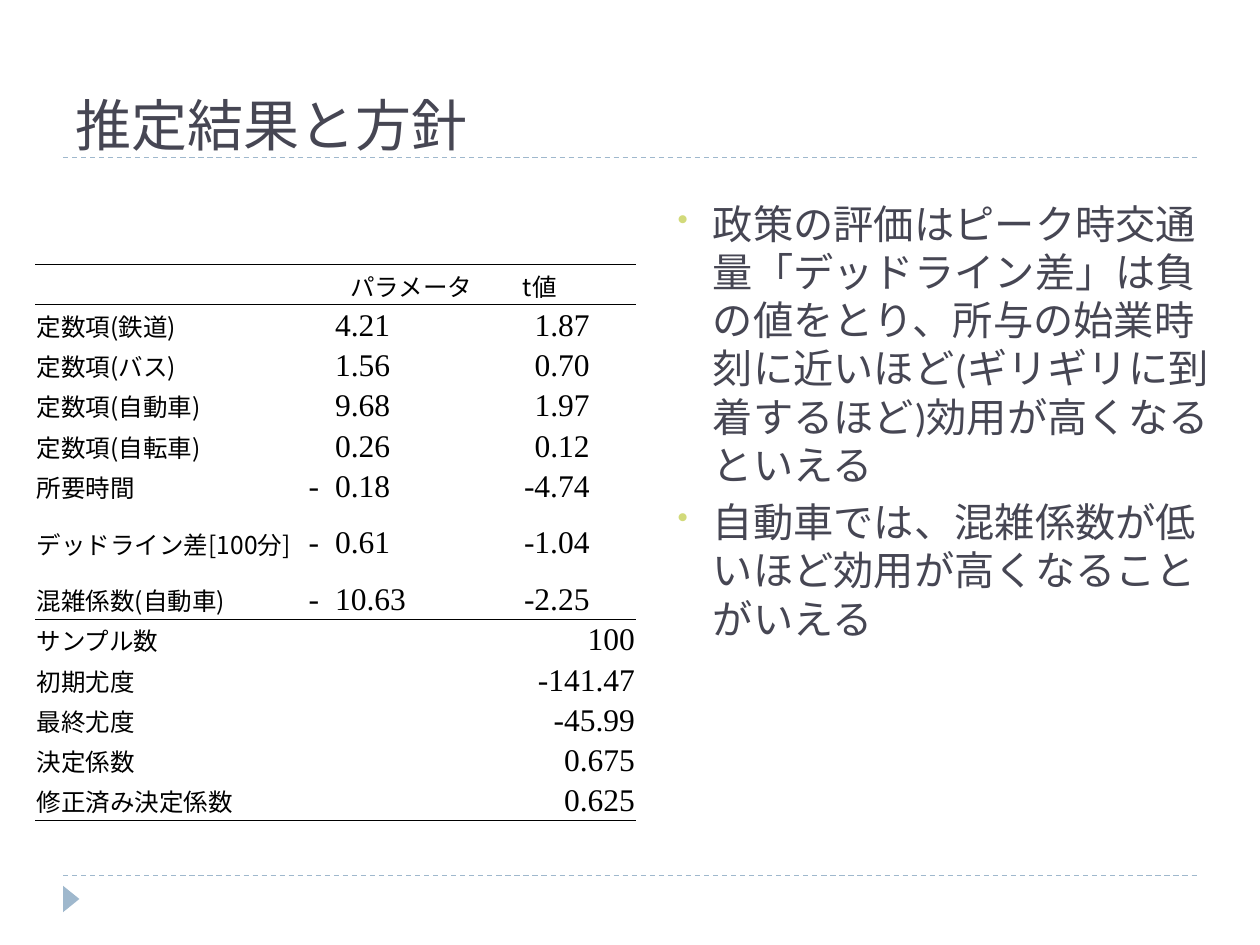
from lxml import etree
from pptx import Presentation
from pptx.dml.color import RGBColor
from pptx.enum.dml import MSO_LINE
from pptx.enum.shapes import MSO_CONNECTOR, MSO_SHAPE
from pptx.enum.text import MSO_ANCHOR, PP_ALIGN
from pptx.oxml.ns import qn
from pptx.util import Inches, Pt

STRAIGHT = MSO_CONNECTOR.STRAIGHT
TRIANGLE = MSO_SHAPE.ISOSCELES_TRIANGLE
DASH = MSO_LINE.DASH
TOP, MIDDLE, BOTTOM = MSO_ANCHOR.TOP, MSO_ANCHOR.MIDDLE, MSO_ANCHOR.BOTTOM
LEFT, CENTER, RIGHT = PP_ALIGN.LEFT, PP_ALIGN.CENTER, PP_ALIGN.RIGHT

INK = RGBColor(0x46, 0x46, 0x53)
BLACK = RGBColor(0x00, 0x00, 0x00)
ACCENT = RGBColor(0x9F, 0xB8, 0xCD)
BULLET = RGBColor(0xD2, 0xDA, 0x7A)

COLUMNS, ROWS = 100, 75
UNIT = Inches(0.1)

LABEL = {"font": "Noto Sans CJK JP", "size": 14, "color": BLACK}
NUMBER = {"font": "Times New Roman", "size": 18, "color": BLACK}

TABLE_COLUMNS = (21.6, 2.1, 12.3, 8.1, 3.6)
TABLE_ROW = 3.2
ESTIMATES = (
    ("定数項(鉄道)", "", "4.21", "1.87"),
    ("定数項(バス)", "", "1.56", "0.70"),
    ("定数項(自動車)", "", "9.68", "1.97"),
    ("定数項(自転車)", "", "0.26", "0.12"),
    ("所要時間", "-", "0.18", "-4.74"),
    ("デッドライン差[100分]", "-", "0.61", "-1.04"),
    ("混雑係数(自動車)", "-", "10.63", "-2.25"),
)
SUMMARY = (
    ("サンプル数", "100"),
    ("初期尤度", "-141.47"),
    ("最終尤度", "-45.99"),
    ("決定係数", "0.675"),
    ("修正済み決定係数", "0.625"),
)
FINDINGS = (
    "政策の評価はピーク時交通量「デッドライン差」は負の値をとり、所与の始業時刻に近いほど"
    "(ギリギリに到着するほど)効用が高くなるといえる",
    "自動車では、混雑係数が低いほど効用が高くなることがいえる",
)


def grid(*lengths):
    """Turn grid units into slide lengths."""
    return [int(length * UNIT) for length in lengths]


def write(para, text, font, size, color, align=LEFT):
    """Put one formatted span of text in a paragraph."""
    para.alignment = align
    span = para.add_run()
    span.text = text
    span.font.name = font
    span.font.size = Pt(size)
    span.font.color.rgb = color
    properties = span.font._element
    properties.set("lang", "ja-JP")
    etree.SubElement(properties, qn("a:ea"), typeface=font)


def add_bullet(para):
    """Give a paragraph its hanging coloured bullet."""
    para.space_before = Pt(5)
    properties = para._p.get_or_add_pPr()
    properties.set("marL", str(Inches(0.4)))
    properties.set("indent", str(Inches(-0.28)))
    color = etree.SubElement(properties, qn("a:buClr"))
    etree.SubElement(color, qn("a:srgbClr"), val=str(BULLET))
    etree.SubElement(properties, qn("a:buSzPct"), val="76000")
    etree.SubElement(properties, qn("a:buChar"), char="•")


def add_text(page, place, texts, anchor=TOP, bullets=False, **style):
    """Add a wrapped text box with one paragraph per text."""
    frame = page.shapes.add_textbox(*grid(*place)).text_frame
    frame.word_wrap = True
    frame.vertical_anchor = anchor
    for index, text in enumerate(texts):
        para = frame.add_paragraph() if index else frame.paragraphs[0]
        if bullets:
            add_bullet(para)
        write(para, text, **style)


def add_divider(page, row):
    """Draw a dashed line across the slide between its margins."""
    divider = page.shapes.add_connector(STRAIGHT, *grid(5, row, COLUMNS - 5, row))
    divider.line.color.rgb = ACCENT
    divider.line.width = Pt(0.75)
    divider.line.dash_style = DASH
    etree.SubElement(divider._element.spPr, qn("a:effectLst"))


def add_marker(page):
    """Add the triangle that points right in the footer."""
    marker = page.shapes.add_shape(TRIANGLE, *grid(4.6, 70.7, 2.1, 1.3))
    marker.rotation = 90
    marker.shadow.inherit = False
    marker.fill.solid()
    marker.fill.fore_color.rgb = ACCENT
    marker.line.fill.background()


def set_borders(cell, widths):
    """Set the top and bottom borders of a cell, and hide the side ones."""
    properties = cell._tc.get_or_add_tcPr()
    for index, side in enumerate(("lnL", "lnR", "lnT", "lnB")):
        width = widths.get(side)
        border = etree.Element(qn(f"a:{side}"), w=str(Pt(width or 0)))
        if width:
            fill = etree.SubElement(border, qn("a:solidFill"))
            etree.SubElement(fill, qn("a:srgbClr"), val=str(BLACK))
        else:
            etree.SubElement(border, qn("a:noFill"))
        properties.insert(index, border)


def prepare_cells(table):
    """Give all cells tight margins, no fill and the horizontal rules."""
    last = len(table.rows)
    rules = {0: 0.5, 1: 0.5, 1 + len(ESTIMATES): 1, last: 0.5}
    for index, row in enumerate(table.rows):
        row.height = grid(TABLE_ROW)[0]
        for cell in row.cells:
            cell.margin_left = cell.margin_right = cell.margin_top = Inches(0.01)
            cell.margin_bottom = 0
            cell.vertical_anchor = MIDDLE
            cell.fill.background()
            set_borders(cell, {"lnT": rules.get(index), "lnB": rules.get(index + 1)})


def add_results(page):
    """Add the table of estimates with its summary rows."""
    count = 1 + len(ESTIMATES) + len(SUMMARY)
    place = grid(2.8, 21, sum(TABLE_COLUMNS), count * TABLE_ROW)
    table = page.shapes.add_table(count, len(TABLE_COLUMNS), *place).table
    table.first_row = table.horz_banding = False
    for column, width in zip(table.columns, grid(*TABLE_COLUMNS)):
        column.width = width
    prepare_cells(table)

    def fill(row, column, text, align=LEFT, **style):
        if text:
            para = table.cell(row, column).text_frame.paragraphs[0]
            write(para, text, align=align, **style)

    for column, heading in ((2, "パラメータ"), (3, "t値")):
        fill(0, column, heading, CENTER, **LABEL)
    for row, (label, sign, value, t_value) in enumerate(ESTIMATES, 1):
        fill(row, 0, label, **LABEL)
        fill(row, 1, sign, **NUMBER)
        fill(row, 2, value, **NUMBER)
        fill(row, 3, t_value, RIGHT, **NUMBER)
    for row, (label, value) in enumerate(SUMMARY, 1 + len(ESTIMATES)):
        table.cell(row, 1).merge(table.cell(row, len(TABLE_COLUMNS) - 1))
        fill(row, 0, label, **LABEL)
        fill(row, 1, value, RIGHT, **NUMBER)


def main():
    """Build the slide and save it."""
    deck = Presentation()
    deck.slide_width, deck.slide_height = grid(COLUMNS, ROWS)
    page = deck.slides.add_slide(deck.slide_layouts[6])
    for row in (69.5, 12.5):
        add_divider(page, row)
    add_marker(page)
    add_results(page)
    add_text(page, (5, 1.3, 90, 11.7), ["推定結果と方針"], anchor=BOTTOM,
             font="Roboto Slab", size=32, color=INK)
    add_text(page, (51.6, 15.3, 47.2, 57.7), FINDINGS, bullets=True,
             font="Calibri", size=23, color=INK)
    deck.save("out.pptx")


if __name__ == "__main__":
    main()
